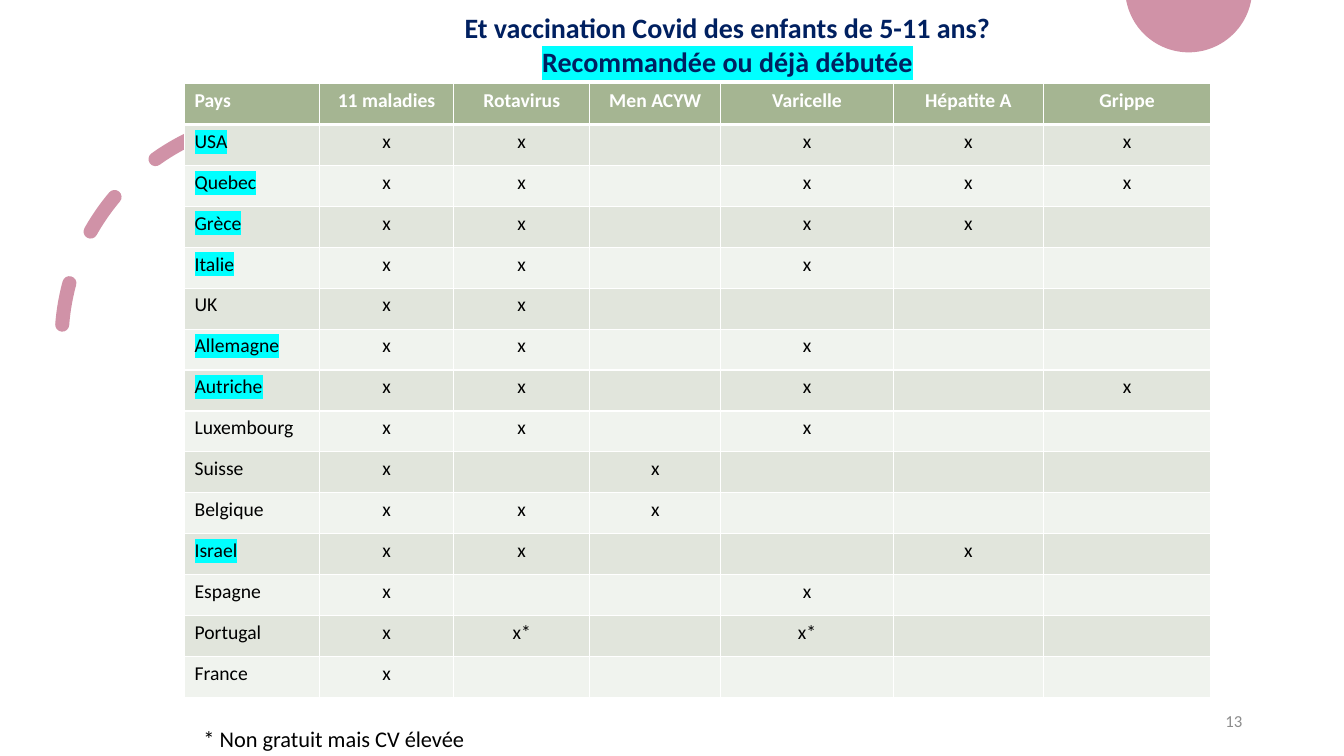
import math
from lxml import etree
from pptx import Presentation
from pptx.dml.color import RGBColor
from pptx.enum.dml import MSO_LINE
from pptx.enum.shapes import MSO_SHAPE
from pptx.enum.text import MSO_ANCHOR, PP_ALIGN
from pptx.oxml.ns import qn
from pptx.util import Inches, Pt

ARC, DASH = MSO_SHAPE.ARC, MSO_LINE.DASH
TOP, MIDDLE = MSO_ANCHOR.TOP, MSO_ANCHOR.MIDDLE
LEFT, CENTER, RIGHT = PP_ALIGN.LEFT, PP_ALIGN.CENTER, PP_ALIGN.RIGHT

PINK = RGBColor(0xD0, 0x92, 0xA7)
GREEN = RGBColor(0xA5, 0xB5, 0x92)
BANDS = [RGBColor(0xF0, 0xF3, 0xEE), RGBColor(0xE1, 0xE5, 0xDC)]
WHITE = RGBColor(0xFF, 0xFF, 0xFF)
BLACK = RGBColor(0, 0, 0)
GREY = RGBColor(0x8C, 0x8C, 0x8C)
NAVY = RGBColor(0x00, 0x20, 0x60)
CYAN = RGBColor(0x00, 0xFF, 0xFF)


def write(p, text, size, color, align=LEFT, bold=False, marked=False):
    p.alignment = align
    r = p.add_run()
    r.text = text
    r.font.color.rgb = color
    for name, value in {"name": "Calibri", "size": Pt(size), "bold": bold}.items():
        setattr(r.font, name, value)
    if marked:
        highlight = etree.Element(qn("a:highlight"))
        etree.SubElement(highlight, qn("a:srgbClr"), val=str(CYAN))
        r.font._element.find(qn("a:solidFill")).addnext(highlight)


def border(cell, side, width):
    ln = etree.SubElement(cell._tc.get_or_add_tcPr(), qn("a:ln" + side), w=str(Pt(width)))
    fill = etree.SubElement(ln, qn("a:solidFill"))
    etree.SubElement(fill, qn("a:srgbClr"), val=str(WHITE))


prs = Presentation()
prs.slide_width, prs.slide_height = Inches(13.33), Inches(7.5)
s = prs.slides.add_slide(prs.slide_layouts[6])

RADIUS, CENTER_X, CENTER_Y = 0.63, 11.79, -0.11
points = [(Inches(CENTER_X + RADIUS * math.cos(math.radians(a))),
           Inches(CENTER_Y + RADIUS * math.sin(math.radians(a))))
          for a in range(10, 171, 2)]
builder = s.shapes.build_freeform(*points[0], scale=1.0)
builder.add_line_segments(points[1:], close=True)
disc = builder.convert_to_shape()
disc.shadow.inherit = False
disc.fill.solid()
disc.fill.fore_color.rgb = PINK
disc.line.fill.background()

arc = s.shapes.add_shape(ARC, Inches(0.61), Inches(1.16), Inches(4.47), Inches(4.47))
arc.shadow.inherit = False
arc.rotation = 180
arc._element.spPr.find(qn("a:xfrm")).set("flipV", "1")
arc.fill.background()
arc.line.color.rgb = PINK
arc.line.width = Pt(10)
arc.line.dash_style = DASH
arc.line._ln.set("cap", "rnd")

headers = ["Pays", "11 maladies", "Rotavirus", "Men ACYW", "Varicelle", "Hépatite A", "Grippe"]
countries = {
    "USA": "x x - x x x",
    "Quebec": "x x - x x x",
    "Grèce": "x x - x x -",
    "Italie": "x x - x - -",
    "UK": "x x - - - -",
    "Allemagne": "x x - x - -",
    "Autriche": "x x - x - x",
    "Luxembourg": "x x - x - -",
    "Suisse": "x - x - - -",
    "Belgique": "x x x - - -",
    "Israel": "x x - - x -",
    "Espagne": "x - - x - -",
    "Portugal": "x x* - x* - -",
    "France": "x - - - - -",
}
covid = {"USA", "Quebec", "Grèce", "Italie", "Allemagne", "Autriche", "Israel"}
rows = [headers] + [[name] + marks.split() for name, marks in countries.items()]
widths = [1.34, 1.33, 1.35, 1.3, 1.71, 1.49, 1.66]

table = s.shapes.add_table(len(rows), len(widths), Inches(1.83), Inches(0.83),
                           Inches(sum(widths)), Inches(6.09)).table
for column, width in zip(table.columns, widths):
    column.width = Inches(width)
for i, row in enumerate(rows):
    for j, text in enumerate(row):
        cell = table.cell(i, j)
        for side in "LRTB":
            border(cell, side, 3 if (i, side) in [(0, "B"), (1, "T")] else 1)
        cell.fill.solid()
        cell.fill.fore_color.rgb = BANDS[i % 2] if i else GREEN
        if text != "-":
            write(cell.text_frame.paragraphs[0], text, 14, BLACK if i else WHITE,
                  CENTER if j else LEFT, i == 0, text in covid)

texts = [
    ((9.42, 6.95, 3, 0.4), MIDDLE, [("13", 12, GREY, RIGHT)]),
    ((1.92, 7.14, 3.7, 0.37), TOP, [("* Non gratuit mais CV élevée", 16, BLACK)]),
    ((2.41, 0.06, 9.61, 0.77), TOP,
     [("Et vaccination Covid des enfants de 5-11 ans?", 20, NAVY, CENTER, True),
      ("Recommandée ou déjà débutée", 20, NAVY, CENTER, True, True)]),
]
for box, anchor, lines in texts:
    tf = s.shapes.add_textbox(*map(Inches, box)).text_frame
    tf.word_wrap = True
    tf.vertical_anchor = anchor
    for k, line in enumerate(lines):
        write(tf.add_paragraph() if k else tf.paragraphs[0], *line)

prs.save("out.pptx")
